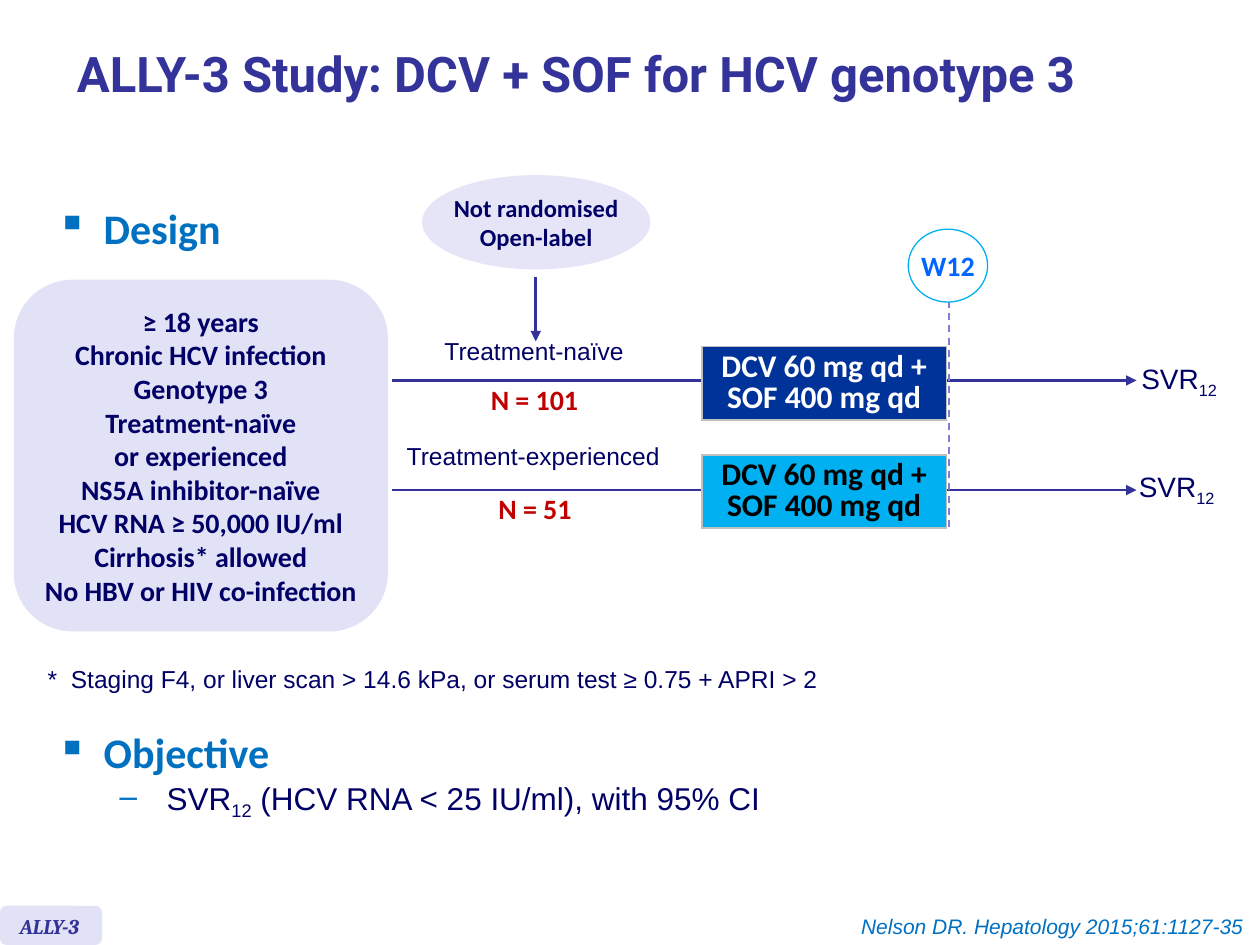
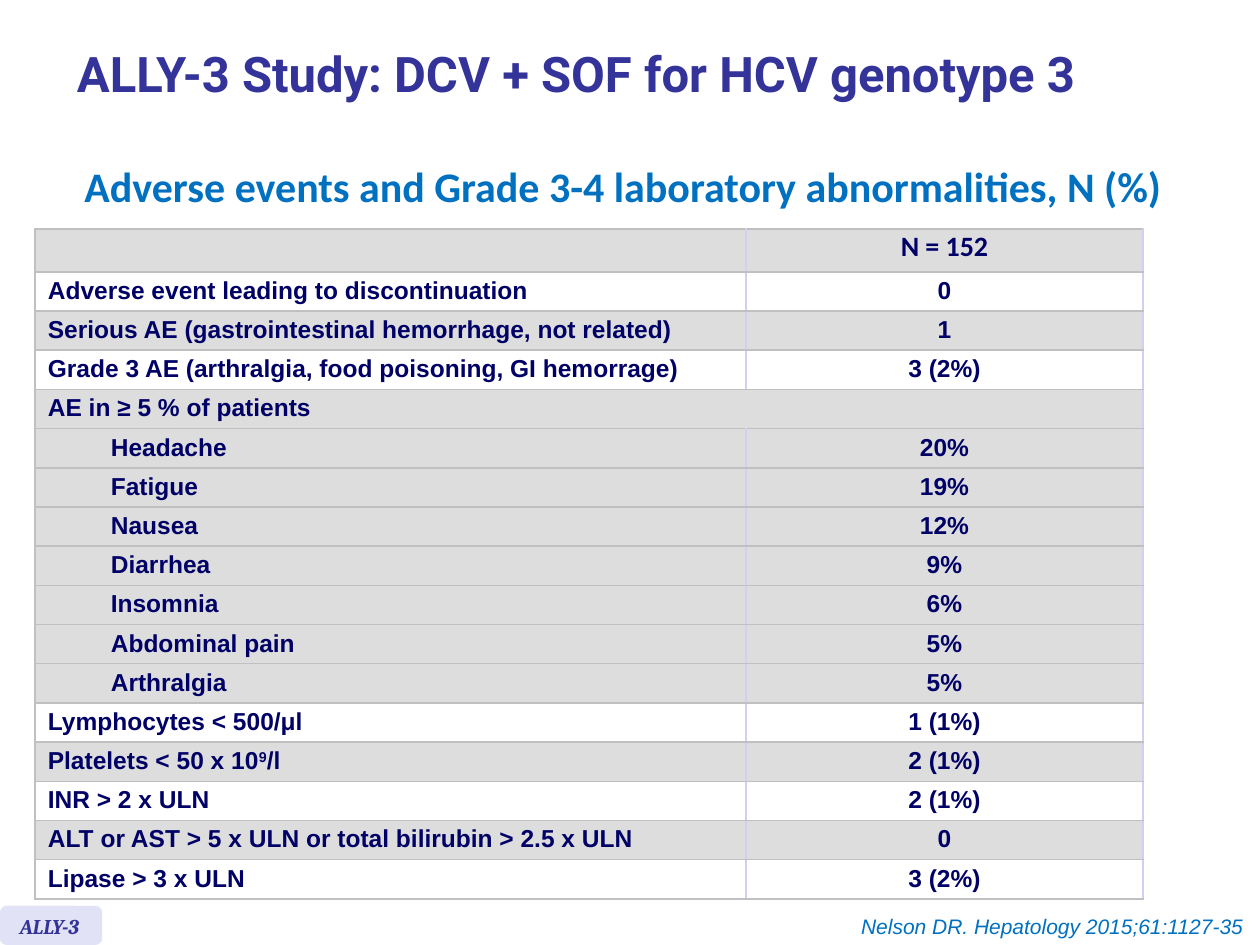
from lxml.etree import SubElement
from pptx import Presentation
from pptx.dml.color import RGBColor
from pptx.enum.dml import MSO_LINE
from pptx.enum.shapes import MSO_CONNECTOR, MSO_SHAPE
from pptx.enum.text import MSO_ANCHOR, PP_ALIGN
from pptx.oxml.ns import qn
from pptx.util import Cm, Pt

rgb = RGBColor.from_string
INDIGO, NAVY, BLUE, RED = "333399", "000066", "0070C0", "C00000"
LAVENDER, GREY, EDGE, INNER = "E2E2F6", "DDDDDD", "C0C0C0", "D0D0F0"
CENTER, RIGHT = PP_ALIGN.CENTER, PP_ALIGN.RIGHT


def write(tf, text, size, font="Arial", color=NAVY, bold=False, italic=False, align=None,
          base=0, spacing=None, before=None, left=0, hanging=0, bullet=None):
    """Add one paragraph per line; text between bars is raised or lowered by base percent."""
    for line in text.split("\n"):
        p = tf.add_paragraph() if tf.text else tf.paragraphs[0]
        p.alignment, p.line_spacing, p.space_before = align, spacing, before
        pPr = p._p.get_or_add_pPr()
        if left:
            pPr.set("marL", str(Cm(left)))
            pPr.set("indent", str(-Cm(hanging)))
        if bullet:
            SubElement(SubElement(pPr, qn("a:buClr")), qn("a:srgbClr"), val=BLUE)
            SubElement(pPr, qn("a:buChar"), char=bullet)
        for i, part in enumerate(line.split("|")):
            r = p.add_run()
            r.text = part
            r.font.size, r.font.name = Pt(size), font
            r.font.bold, r.font.italic = bold, italic
            r.font.color.rgb = rgb(color)
            if i % 2:
                r._r.get_or_add_rPr().set("baseline", str(base * 1000))


def add_line(s, x1, y1, x2, y2, color=INDIGO, width=1.5, arrow=True):
    """Draw a solid arrow, or a dashed line without a head."""
    c = s.shapes.add_connector(MSO_CONNECTOR.STRAIGHT, Cm(x1), Cm(y1), Cm(x2), Cm(y2))
    c.line.color.rgb = rgb(color)
    c.line.width = Pt(width)
    spPr = c._element.spPr
    if arrow:
        SubElement(spPr.find(qn("a:ln")), qn("a:tailEnd"), type="triangle")
    else:
        c.line.dash_style = MSO_LINE.DASH
    SubElement(spPr, qn("a:effectLst"))


prs = Presentation()
prs.slide_width, prs.slide_height = Cm(25.4), Cm(19.05)
design, events = [prs.slides.add_slide(prs.slide_layouts[6]) for _ in range(2)]

# Title, study badge and citation on both slides
for s in (design, events):
    tf = s.shapes.add_textbox(Cm(1.3), Cm(0.2), Cm(23.19), Cm(2.72)).text_frame
    tf.word_wrap, tf.vertical_anchor = True, MSO_ANCHOR.MIDDLE
    write(tf, "ALLY-3 Study: DCV + SOF for HCV genotype 3", 28, "Roboto", INDIGO, True, spacing=0.85)

    badge = s.shapes.add_shape(MSO_SHAPE.ROUNDED_RECTANGLE, 0, Cm(18.26), Cm(2.06), Cm(0.79))
    badge.shadow.inherit = False
    badge.fill.solid()
    badge.fill.fore_color.rgb = rgb(LAVENDER)
    badge.line.fill.background()
    tf = s.shapes.add_textbox(Cm(0.15), Cm(18.29), Cm(2.24), Cm(0.76)).text_frame
    tf.word_wrap = True
    write(tf, "ALLY-3", 12, "Cambria", INDIGO, True, True)

    tf = s.shapes.add_textbox(Cm(15.34), Cm(18.29), Cm(9.98), Cm(0.76)).text_frame
    tf.word_wrap = True
    write(tf, "Nelson DR. Hepatology 2015;61:1127-35", 12, color=BLUE, italic=True, align=RIGHT)

# Slide 1: section headings
heading = dict(size=24, font="Calibri", color=BLUE, bold=True, left=0.95, hanging=0.95, bullet="▪")
tf = design.shapes.add_textbox(Cm(0.89), Cm(3.96), Cm(5.03), Cm(1.6)).text_frame
tf.word_wrap = True
write(tf, "Design", **heading)
tf = design.shapes.add_textbox(Cm(0.89), Cm(14.53), Cm(19.81), Cm(3.07)).text_frame
tf.word_wrap = True
write(tf, "Objective", **heading)
write(tf, "SVR|12| (HCV RNA < 25 IU/ml), with 95% CI", 18, base=-25, before=Pt(0.7),
      left=2.22, hanging=0.95, bullet="–")

# Slide 1: study arms
for y in (7.67, 9.88):
    add_line(design, 7.9, y, 22.91, y)
add_line(design, 10.8, 5.59, 10.8, 6.88)

bordered = []
for y, fill, color in ((6.99, "003399", "FFFFFF"), (9.17, "00B0F0", "000000")):
    table = design.shapes.add_table(1, 1, Cm(14.15), Cm(y), Cm(4.93), Cm(1.47)).table
    cell = table.cell(0, 0)
    cell.fill.solid()
    cell.fill.fore_color.rgb = rgb(fill)
    cell.vertical_anchor = MSO_ANCHOR.MIDDLE
    write(cell.text_frame, "DCV 60 mg qd + SOF 400 mg qd", 18, "Calibri", color, True,
          align=CENTER, spacing=0.8)
    bordered.append((cell, EDGE, EDGE))

add_line(design, 19.13, 6.07, 19.13, 10.72, "7E7ED4", 1, arrow=False)

criteria = """≥ 18 years
Chronic HCV infection
Genotype 3
Treatment-naïve
or experienced
NS5A inhibitor-naïve
HCV RNA ≥ 50,000 IU/ml
Cirrhosis* allowed
No HBV or HIV co-infection"""
bubbles = [
    (MSO_SHAPE.OVAL, 8.51, 3.53, 4.6, 1.9, "E5E5F7", None, "Not randomised\nOpen-label", 14, NAVY),
    (MSO_SHAPE.OVAL, 18.31, 4.62, 1.6, 1.47, "FFFFFF", "00B0F0", "W12", 16, "0066FF"),
    (MSO_SHAPE.ROUNDED_RECTANGLE, 0.28, 5.64, 7.54, 7.09, LAVENDER, None, criteria, 16, NAVY),
]
for kind, x, y, w, h, fill, outline, text, size, color in bubbles:
    sp = design.shapes.add_shape(kind, Cm(x), Cm(y), Cm(w), Cm(h))
    sp.shadow.inherit = False
    sp.fill.solid()
    sp.fill.fore_color.rgb = rgb(fill)
    if outline:
        sp.line.color.rgb = rgb(outline)
        sp.line.width = Pt(0.75)
    else:
        sp.line.fill.background()
    tf = sp.text_frame
    tf.word_wrap, tf.vertical_anchor = False, MSO_ANCHOR.MIDDLE
    tf.margin_left = tf.margin_right = tf.margin_top = tf.margin_bottom = 0
    write(tf, text, size, "Calibri", color, True, align=CENTER)

count = dict(size=16, font="Calibri", color=RED, bold=True, align=CENTER)
arm = dict(size=14)
endpoint = dict(size=16, base=-25)
footnote = dict(size=14, left=0.47, hanging=0.47)
labels = [
    (9.63, 7.59, 2.29, 0.94, "N = 101", count),
    (9.78, 9.78, 2.01, 0.94, "N = 51", count),
    (8.71, 6.65, 4.17, 0.86, "Treatment-naïve", arm),
    (7.95, 8.76, 5.64, 0.86, "Treatment-experienced", arm),
    (22.76, 7.16, 2.11, 0.94, "SVR|12", endpoint),
    (22.71, 9.35, 2.11, 0.94, "SVR|12", endpoint),
    (0.71, 13.26, 16.1, 0.86,
     "*\tStaging F4, or liver scan > 14.6 kPa, or serum test ≥ 0.75 + APRI > 2", footnote),
]
for x, y, w, h, text, style in labels:
    tf = design.shapes.add_textbox(Cm(x), Cm(y), Cm(w), Cm(h)).text_frame
    tf.word_wrap = False
    write(tf, text, **style)

# Slide 2: adverse events table
tf = events.shapes.add_textbox(0, Cm(3.12), Cm(25.12), Cm(1.27)).text_frame
tf.word_wrap = True
write(tf, "Adverse events and Grade 3-4 laboratory abnormalities, N (%)", 24, "Calibri", BLUE, True,
      align=CENTER)

rows = [
    ("", "N = 152"),
    ("Adverse event leading to discontinuation", "0"),
    ("Serious AE (gastrointestinal hemorrhage, not related)", "1"),
    ("Grade 3 AE (arthralgia, food poisoning, GI hemorrage)", "3 (2%)"),
    ("AE in ≥ 5 % of patients", ""),
    ("Headache", "20%"),
    ("Fatigue", "19%"),
    ("Nausea", "12%"),
    ("Diarrhea", "9%"),
    ("Insomnia", "6%"),
    ("Abdominal pain", "5%"),
    ("Arthralgia", "5%"),
    ("Lymphocytes < 500/μl", "1 (1%)"),
    ("Platelets < 50 x 10|9|/l", "2 (1%)"),
    ("INR > 2 x ULN", "2 (1%)"),
    ("ALT or AST > 5 x ULN or total bilirubin > 2.5 x ULN", "0"),
    ("Lipase > 3 x ULN", "3 (2%)"),
]
group_row, symptom_rows, white_rows = 4, range(5, 12), (1, 3, 12, 14, 16)
table = events.shapes.add_table(len(rows), 2, Cm(0.71), Cm(4.62), Cm(22.33), Cm(13.5)).table
table.columns[0].width, table.columns[1].width = Cm(14.33), Cm(8)
table.cell(group_row, 0).merge(table.cell(group_row, 1))
for i, row in enumerate(rows):
    table.rows[i].height = Cm(0.79 if i else 0.86)
    for j, text in enumerate(row):
        cell = table.cell(i, j)
        cell.vertical_anchor = MSO_ANCHOR.MIDDLE
        cell.fill.solid()
        cell.fill.fore_color.rgb = rgb("FFFFFF" if i in white_rows else GREY)
        bordered.append((cell, INNER if j else EDGE, INNER))
        size, font = (14, "Arial") if i else (16, "Calibri")
        if text:
            write(cell.text_frame, text, size, font, bold=True, align=CENTER if j else None,
                  base=30, spacing=Pt(15), left=1.27 if i in symptom_rows and not j else 0)
        else:
            p = cell.text_frame.paragraphs[0]
            p.line_spacing = Pt(15)
            SubElement(p._p, qn("a:endParaRPr"), sz="1400")

# Cell borders of all tables
for cell, left, right in bordered:
    tcPr = cell._tc.get_or_add_tcPr()
    for i, (side, color) in enumerate(zip("LRTB", (left, right, EDGE, EDGE))):
        ln = SubElement(tcPr, qn(f"a:ln{side}"), w=str(Pt(1)))
        SubElement(SubElement(ln, qn("a:solidFill")), qn("a:srgbClr"), val=color)
        tcPr.insert(i, ln)

prs.save("out.pptx")
